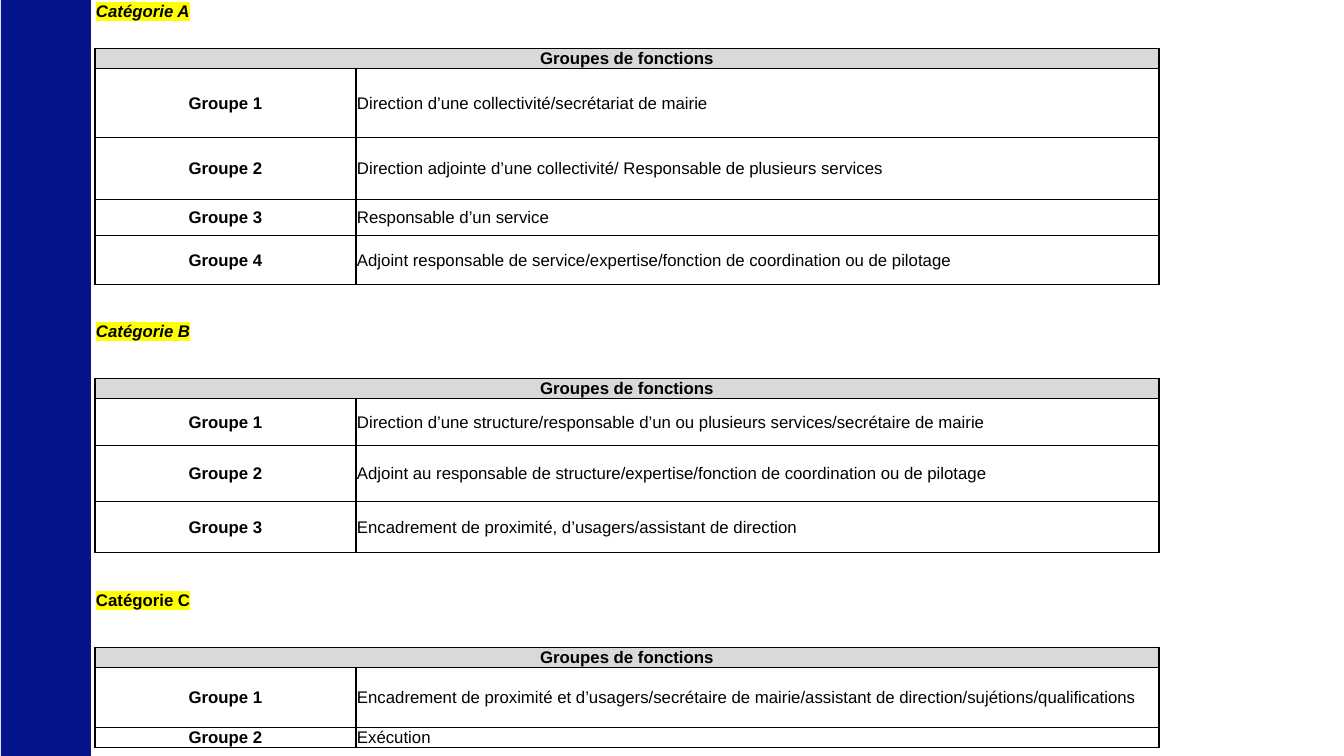
from lxml import etree
from pptx import Presentation
from pptx.dml.color import RGBColor
from pptx.enum.shapes import MSO_SHAPE
from pptx.enum.text import MSO_ANCHOR, PP_ALIGN
from pptx.oxml.ns import qn
from pptx.util import Pt

RECT = MSO_SHAPE.RECTANGLE
MIDDLE = MSO_ANCHOR.MIDDLE
LEFT, CENTER, JUSTIFY = PP_ALIGN.LEFT, PP_ALIGN.CENTER, PP_ALIGN.JUSTIFY
PX = 914400 / 100.8
COLORS = {"bar": "06148C", "head": "D9D9D9", "white": "FFFFFF",
          "black": "000000", "mark": "FFFF00"}
PLAIN = "{2D5ABB26-0587-4C30-8999-92F81FD0307C}"


def px(n):
    return round(n * PX)


def write(cell, text="", align=LEFT, bold=True, italic=False, mark=False,
          fill=None, edges=""):
    """Fill one table cell with text, background and borders."""
    cell.vertical_anchor = MIDDLE
    cell.margin_left = cell.margin_right = cell.margin_top = px(1)
    cell.margin_bottom = 0
    para = cell.text_frame.paragraphs[0]
    para.alignment = align
    if text:
        run = para.add_run()
        run.text = text
        font = run.font
        font.size, font.bold, font.italic = Pt(12), bold, italic
        font.color.rgb = RGBColor.from_string(COLORS["black"])
        font.name = "Arial"
        if mark:
            light = etree.Element(qn("a:highlight"))
            etree.SubElement(light, qn("a:srgbClr"), val=COLORS["mark"])
            run._r.rPr.find(qn("a:solidFill")).addnext(light)
    else:
        etree.SubElement(para._p, qn("a:endParaRPr"), sz="1200")
    if fill:
        cell.fill.solid()
        cell.fill.fore_color.rgb = RGBColor.from_string(COLORS[fill])
    else:
        cell.fill.background()
    props = cell._tc.get_or_add_tcPr()
    for i, side in enumerate(edges):
        line = etree.Element(qn("a:ln" + side), w=str(Pt(1)))
        paint = etree.SubElement(line, qn("a:solidFill"))
        etree.SubElement(paint, qn("a:srgbClr"), val=COLORS["black"])
        props.insert(i, line)


# Categories: title, italic, title height, groups (height, function)
cats = [
    ("Catégorie A", True, 32, [
        (69, "Direction d’une collectivité/secrétariat de mairie"),
        (62, "Direction adjointe d’une collectivité/ Responsable de plusieurs services"),
        (36, "Responsable d’un service"),
        (49, "Adjoint responsable de service/expertise/fonction de coordination ou de pilotage"),
    ]),
    ("Catégorie B", True, 32, [
        (47, "Direction d’une structure/responsable d’un ou plusieurs services/secrétaire de mairie"),
        (56, "Adjoint au responsable de structure/expertise/fonction de coordination ou de pilotage"),
        (51, "Encadrement de proximité, d’usagers/assistant de direction"),
    ]),
    ("Catégorie C", False, 33, [
        (60, "Encadrement de proximité et d’usagers/secrétaire de mairie/assistant de direction/sujétions/qualifications"),
        (20, "Exécution"),
    ]),
]

# Rows: kind, height, text, italic
rows = []
for n, (title, slant, high, groups) in enumerate(cats):
    if n:
        rows.append(("gap", 31, "", False))
    rows.append(("title", high, title, slant))
    rows.append(("gap", 31 if n else 20, "", False))
    rows.append(("head", 20, "Groupes de fonctions", False))
    for i, (tall, job) in enumerate(groups, 1):
        rows.append((f"Groupe {i}", tall, job, False))

# Slide and side bar
prs = Presentation()
prs.slide_width, prs.slide_height = px(1344), px(756)
slide = prs.slides.add_slide(prs.slide_layouts[6])
bar = slide.shapes.add_shape(RECT, px(1), 0, px(90), px(756))
bar.shadow.inherit = False
bar.fill.solid()
bar.fill.fore_color.rgb = RGBColor.from_string(COLORS["bar"])
bar.line.fill.background()

# Table frame
widths = [261, 140, 663]
total = sum(row[1] for row in rows)
frame = slide.shapes.add_table(len(rows), 3, px(95), px(-5),
                               px(sum(widths)), px(total))
table = frame.table
table.first_row = table.horz_banding = False
table._tbl.tblPr.find(qn("a:tableStyleId")).text = PLAIN
for col, wide in zip(table.columns, widths):
    col.width = px(wide)

# Table rows
for r, (kind, high, text, slant) in enumerate(rows):
    table.rows[r].height = px(high)
    cells = [table.cell(r, c) for c in range(3)]
    if kind in ("gap", "title"):
        write(cells[0], text, align=JUSTIFY, italic=slant, mark=True)
        for cell in cells[1:]:
            write(cell)
        first = 0 if r < 2 else 1
        cells[first].merge(cells[first + 1])
    elif kind == "head":
        write(cells[0], text, align=CENTER, fill="head", edges="LRTB")
        for cell in cells[1:]:
            write(cell, fill="head", edges="LRTB")
        cells[0].merge(cells[2])
    else:
        write(cells[0], kind, align=CENTER, fill="white", edges="LRTB")
        write(cells[1], text, bold=False, fill="white", edges="LRTB")
        write(cells[2], fill="white", edges="LRTB")
        cells[1].merge(cells[2])

prs.save("out.pptx")
